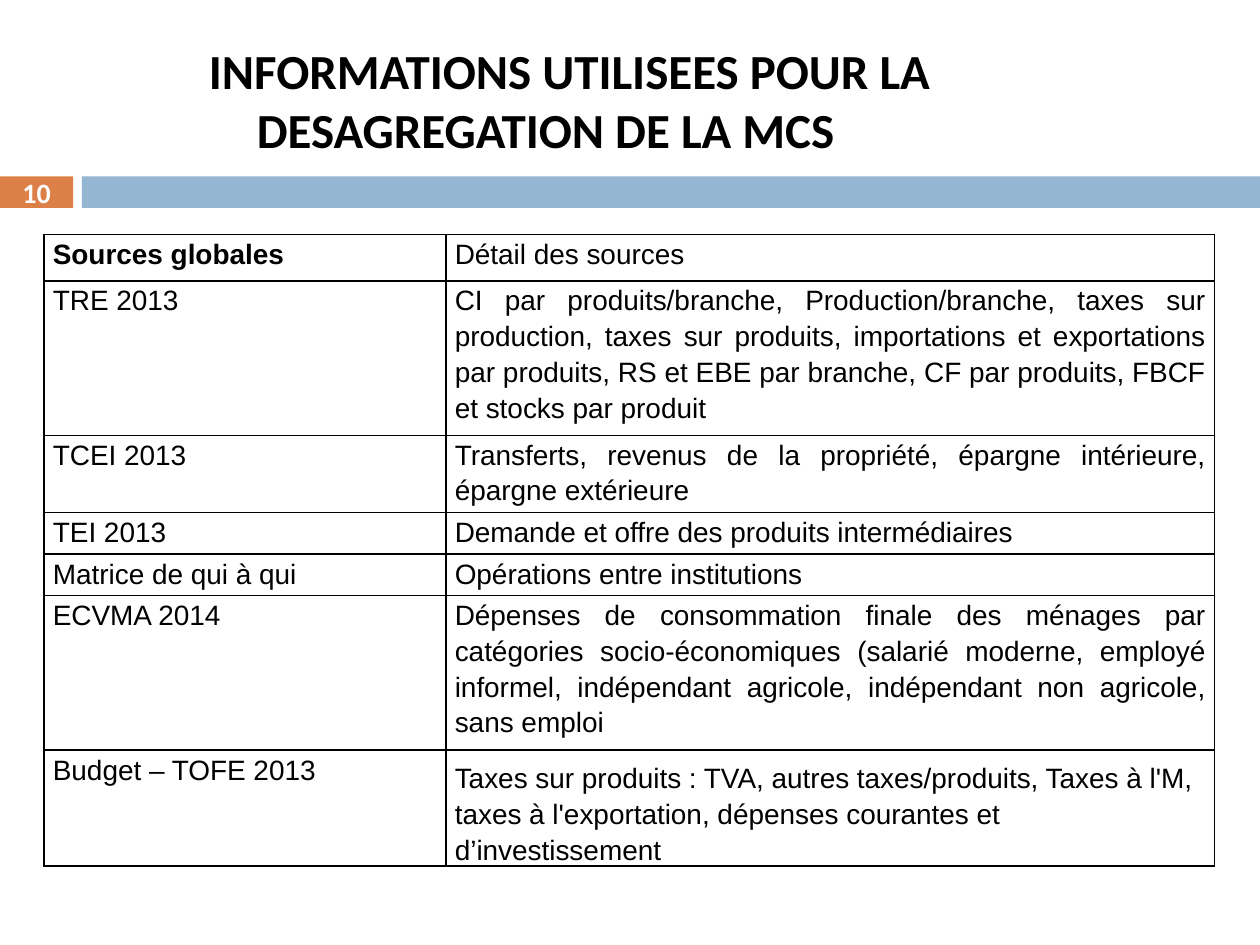
from pptx import Presentation
from pptx.dml.color import RGBColor
from pptx.enum.shapes import MSO_SHAPE
from pptx.enum.text import MSO_ANCHOR as Anchor, PP_ALIGN as Align
from pptx.oxml.ns import qn
from pptx.util import Inches, Pt
from lxml.etree import SubElement

COLORS = {"text": "000000", "white": "FFFFFF", "orange": "DD8047", "blue": "94B6D2"}

COLUMN_WIDTHS = [3.19, 6.1]
# Row height, source, detail
ROWS = [
    (0.37, "Sources globales", "Détail des sources"),
    (1.21, "TRE 2013",
     "CI par produits/branche, Production/branche, taxes sur production, taxes sur "
     "produits, importations et exportations par produits, RS et EBE par branche, "
     "CF par produits, FBCF et stocks par produit"),
    (0.61, "TCEI 2013",
     "Transferts, revenus de la propriété, épargne intérieure, épargne extérieure"),
    (0.33, "TEI 2013", "Demande et offre des produits intermédiaires"),
    (0.33, "Matrice de qui à qui", "Opérations entre institutions"),
    (1.21, "ECVMA 2014",
     "Dépenses de consommation finale des ménages par catégories socio-économiques "
     "(salarié moderne, employé informel, indépendant agricole, indépendant non "
     "agricole, sans emploi"),
    (0.91, "Budget – TOFE 2013",
     "Taxes sur produits : TVA, autres taxes/produits, Taxes à l'M, taxes à "
     "l'exportation, dépenses courantes et d’investissement"),
]


def color(name):
    return RGBColor.from_string(COLORS[name])


def add_run(paragraph, text, font, size, color_name, bold=False):
    run = paragraph.add_run()
    run.text = text
    run.font.name = font
    run.font.size = Pt(size)
    run.font.bold = bold
    run.font.color.rgb = color(color_name)


def add_text_box(slide, left, top, width, height):
    box = slide.shapes.add_textbox(Inches(left), Inches(top), Inches(width), Inches(height))
    box.text_frame.word_wrap = True
    box.text_frame.vertical_anchor = Anchor.MIDDLE
    return box.text_frame


def add_title(slide, left, top, width, height):
    frame = add_text_box(slide, left, top, width, height)
    paragraph = frame.paragraphs[0]
    # Hanging indent
    properties = paragraph._p.get_or_add_pPr()
    properties.set("marL", str(Inches(0.38)))
    properties.set("indent", str(Inches(-0.38)))
    add_run(paragraph, "INFORMATIONS UTILISEES POUR LA DESAGREGATION DE LA MCS",
            "Calibri", 28, "text", bold=True)


def add_band(slide, left, top, width, height, number):
    number_width, gap = 0.58, 0.07
    bar_left = number_width + gap
    for offset, bar_width, fill in ((0, number_width, "orange"),
                                    (bar_left, width - bar_left, "blue")):
        bar = slide.shapes.add_shape(MSO_SHAPE.RECTANGLE, Inches(left + offset), Inches(top),
                                     Inches(bar_width), Inches(height))
        bar.shadow.inherit = False
        bar.fill.solid()
        bar.fill.fore_color.rgb = color(fill)
        bar.line.fill.background()

    # Slide number
    frame = add_text_box(slide, left, top, number_width, height)
    frame.margin_top = frame.margin_bottom = 0
    paragraph = frame.paragraphs[0]
    paragraph.alignment = Align.CENTER
    add_run(paragraph, number, "Calibri", 16, "white", bold=True)


def set_borders(cell):
    properties = cell._tc.get_or_add_tcPr()
    for side in ("lnL", "lnR", "lnT", "lnB"):
        line = SubElement(properties, qn(f"a:{side}"), w=str(Pt(1)))
        fill = SubElement(line, qn("a:solidFill"))
        SubElement(fill, qn("a:srgbClr"), val=COLORS["text"])


def fill_cell(cell, text, bold, last):
    set_borders(cell)
    cell.fill.background()
    cell.margin_left = cell.margin_right = Inches(0.07)
    cell.margin_top = cell.margin_bottom = 0
    cell.vertical_anchor = Anchor.BOTTOM if last else Anchor.TOP
    paragraph = cell.text_frame.paragraphs[0]
    paragraph.alignment = Align.LEFT if last else Align.JUSTIFY
    paragraph.line_spacing = 1.15
    add_run(paragraph, text, "Arial", 16, "text", bold)


def add_sources_table(slide, left, top):
    heights = [row[0] for row in ROWS]
    table = slide.shapes.add_table(
        len(ROWS), len(COLUMN_WIDTHS), Inches(left), Inches(top),
        Inches(sum(COLUMN_WIDTHS)), Inches(sum(heights))).table
    table.first_row = table.horz_banding = False
    for column, width in zip(table.columns, COLUMN_WIDTHS):
        column.width = Inches(width)
    for i, (height, *texts) in enumerate(ROWS):
        table.rows[i].height = Inches(height)
        for j, text in enumerate(texts):
            fill_cell(table.cell(i, j), text, bold=(i == j == 0),
                      last=(i == len(ROWS) - 1 and j == 1))


def main():
    presentation = Presentation()
    presentation.slide_width = Inches(10)
    presentation.slide_height = Inches(7.5)
    slide = presentation.slides.add_slide(presentation.slide_layouts[6])
    add_band(slide, 0, 1.4, 10, 0.25, "10")
    add_title(slide, 1.56, 0.25, 8.02, 1.08)
    add_sources_table(slide, 0.35, 1.86)
    presentation.save("out.pptx")


if __name__ == "__main__":
    main()
